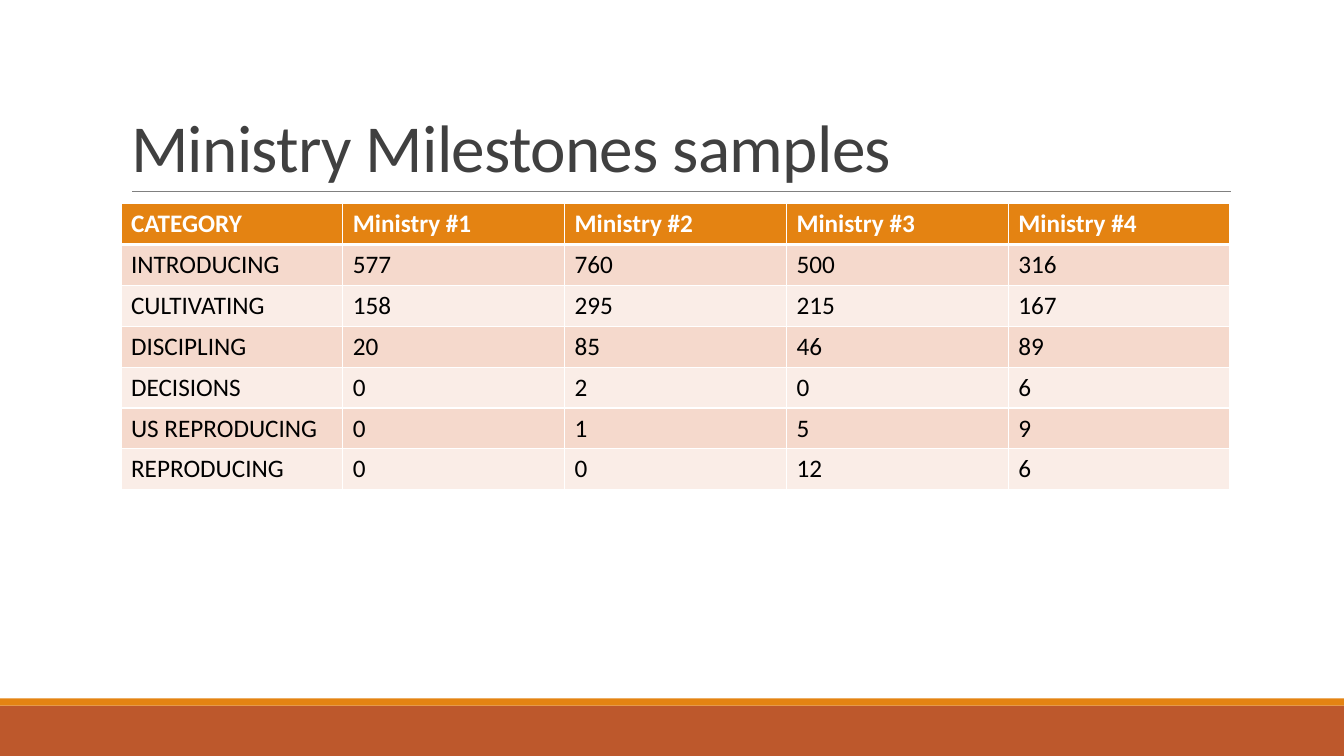
from lxml import etree
from pptx import Presentation
from pptx.dml.color import RGBColor
from pptx.enum.shapes import MSO_CONNECTOR, MSO_SHAPE
from pptx.enum.text import MSO_ANCHOR, PP_ALIGN
from pptx.oxml.ns import qn
from pptx.util import Inches, Pt

STRAIGHT = MSO_CONNECTOR.STRAIGHT
RECTANGLE = MSO_SHAPE.RECTANGLE
BOTTOM = MSO_ANCHOR.BOTTOM
LEFT = PP_ALIGN.LEFT

TITLE = "Ministry Milestones samples"
MILESTONES = [
    ("CATEGORY", "Ministry #1", "Ministry #2", "Ministry #3", "Ministry #4"),
    ("INTRODUCING", 577, 760, 500, 316),
    ("CULTIVATING", 158, 295, 215, 167),
    ("DISCIPLING", 20, 85, 46, 89),
    ("DECISIONS", 0, 2, 0, 6),
    ("US REPRODUCING", 0, 1, 5, 9),
    ("REPRODUCING", 0, 0, 12, 6),
]
FOOTER_BANDS = [(7, 0.5, "BD582C"), (6.93, 0.07, "E48312")]
HEADER_FILL = "E48312"
ROW_FILLS = ("FAEDE7", "F5D9CC")
WIDTH, HEIGHT = 13.33, 7.5
CONTENT_LEFT, CONTENT_WIDTH = 1.2, 11


def color(value):
    return RGBColor.from_string(value)


def write(frame, text, size, ink, bold=False, tracking=0, line_spacing=None):
    para = frame.paragraphs[0]
    para.alignment = LEFT
    if line_spacing:
        para.line_spacing = line_spacing
    span = para.add_run()
    span.text = text
    span.font.name = "Calibri"
    span.font.size = Pt(size)
    span.font.bold = bold
    span.font.color.rgb = color(ink)
    if tracking:
        span.font._element.set("spc", str(round(tracking * 100)))


def add_band(page, top, height, fill):
    band = page.shapes.add_shape(
        RECTANGLE, 0, Inches(top), Inches(WIDTH), Inches(height)
    )
    band.shadow.inherit = False
    band.fill.solid()
    band.fill.fore_color.rgb = color(fill)
    band.line.fill.background()


def add_rule(page):
    rule = page.shapes.add_connector(
        STRAIGHT, Inches(1.31), Inches(1.9), Inches(12.21), Inches(1.9)
    )
    rule.line.color.rgb = color("808080")
    rule.line.width = Pt(0.5)
    etree.SubElement(rule._element.spPr, qn("a:effectLst"))


def add_title(page):
    title = page.shapes.title
    title.left, title.top = Inches(CONTENT_LEFT), Inches(0.31)
    title.width, title.height = Inches(CONTENT_WIDTH), Inches(1.59)
    title.text_frame.vertical_anchor = BOTTOM
    write(title.text_frame, TITLE, 48, "404040", tracking=-0.5, line_spacing=0.85)


def set_borders(cell, bottom):
    properties = cell._tc.get_or_add_tcPr()
    for side, width in (("lnL", 1), ("lnR", 1), ("lnT", 1), ("lnB", bottom)):
        border = etree.SubElement(properties, qn(f"a:{side}"), w=str(Pt(width)))
        fill = etree.SubElement(border, qn("a:solidFill"))
        etree.SubElement(fill, qn("a:srgbClr"), val="FFFFFF")


def add_milestones(page):
    table = page.shapes.add_table(
        len(MILESTONES), len(MILESTONES[0]),
        Inches(CONTENT_LEFT), Inches(2.02), Inches(CONTENT_WIDTH), Inches(2.84),
    ).table
    for row, values in enumerate(MILESTONES):
        header = row == 0
        for column, value in enumerate(values):
            cell = table.cell(row, column)
            set_borders(cell, bottom=3 if header else 1)
            cell.fill.solid()
            cell.fill.fore_color.rgb = color(HEADER_FILL if header else ROW_FILLS[row % 2])
            ink = "FFFFFF" if header else "000000"
            write(cell.text_frame, str(value), 18, ink, bold=header)


def main():
    deck = Presentation()
    deck.slide_width, deck.slide_height = Inches(WIDTH), Inches(HEIGHT)
    page = deck.slides.add_slide(deck.slide_layouts[5])
    for top, height, fill in FOOTER_BANDS:
        add_band(page, top, height, fill)
    add_rule(page)
    add_title(page)
    add_milestones(page)
    deck.save("out.pptx")


if __name__ == "__main__":
    main()
